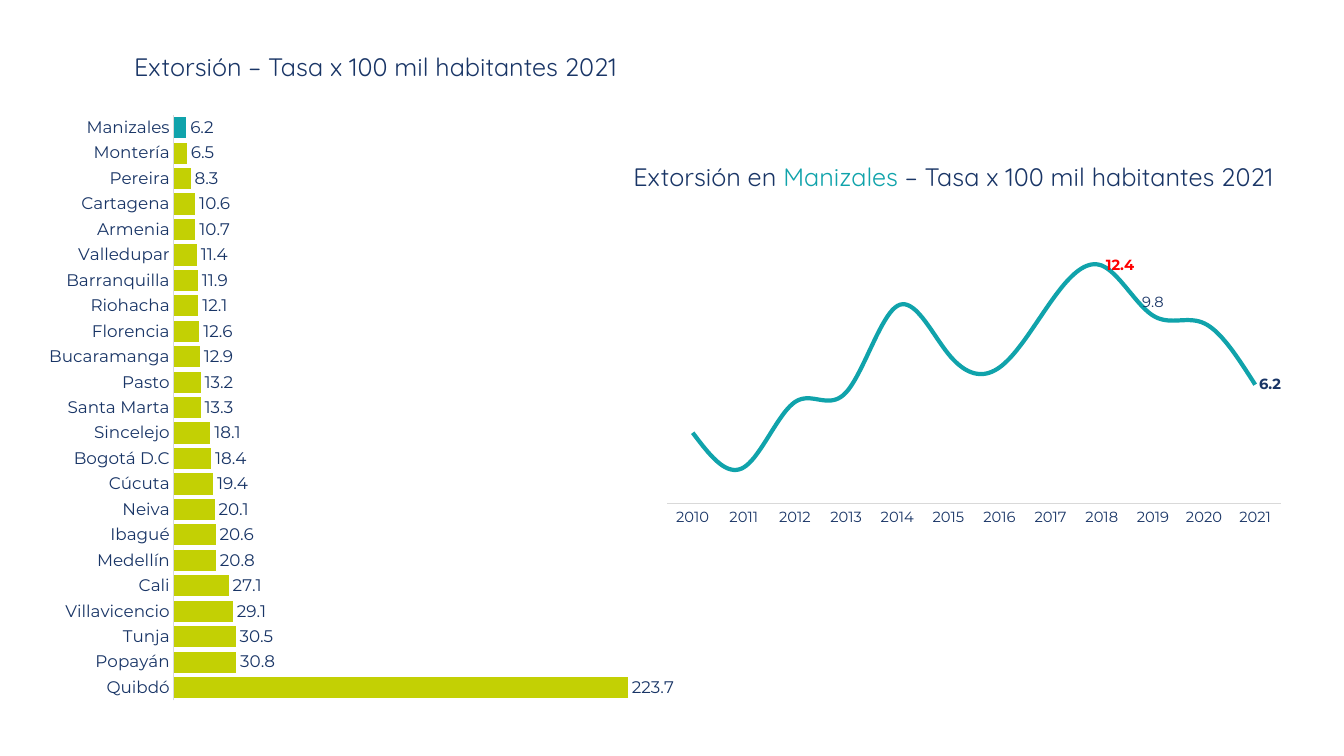
"""Build a slide on extortion rates: a bar chart by city and a line chart by year."""
import pptx
import pptx.chart.data
import pptx.dml.color
import pptx.enum.chart
import pptx.enum.text
import pptx.oxml
import pptx.oxml.ns
import pptx.util

Inches = pptx.util.Inches
Pt = pptx.util.Pt
RGBColor = pptx.dml.color.RGBColor
Kind = pptx.enum.chart.XL_CHART_TYPE
Place = pptx.enum.chart.XL_LABEL_POSITION
Tick = pptx.enum.chart.XL_TICK_MARK

NAVY = RGBColor(0x19, 0x35, 0x66)
TEAL = RGBColor(0x10, 0xA3, 0xAB)
LIME = RGBColor(0xC3, 0xD0, 0x04)
GRAY = RGBColor(0xD9, 0xD9, 0xD9)
RED = RGBColor(0xFF, 0x00, 0x00)

CITIES = {
    "Quibdó": 223.7, "Popayán": 30.8, "Tunja": 30.5, "Villavicencio": 29.1,
    "Cali": 27.1, "Medellín": 20.8, "Ibagué": 20.6, "Neiva": 20.1,
    "Cúcuta": 19.4, "Bogotá D.C": 18.4, "Sincelejo": 18.1,
    "Santa Marta": 13.3, "Pasto": 13.2, "Bucaramanga": 12.9,
    "Florencia": 12.6, "Riohacha": 12.1, "Barranquilla": 11.9,
    "Valledupar": 11.4, "Armenia": 10.7, "Cartagena": 10.6,
    "Pereira": 8.3, "Montería": 6.5, "Manizales": 6.2,
}
RATES = [3.7, 1.9, 5.3, 5.8, 10.3, 7.8, 7.1, 10.5, 12.4, 9.8, 9.4, 6.2]
YEARS = {str(2010 + step): rate for step, rate in enumerate(RATES)}


class Board:
    """Hold the style and the current slide."""

    head = "Quicksand"
    body = "Montserrat"

    def __init__(self, deck):
        self.slide = deck.slides.add_slide(deck.slide_layouts[5])

    def style(self, font, name, size, color, bold=False):
        font.name = name
        font.size = Pt(size)
        font.color.rgb = color
        font.bold = bold

    def letter(self, shape, box, runs):
        shape.left, shape.top, shape.width, shape.height = map(Inches, box)
        frame = shape.text_frame
        frame.word_wrap = True
        frame.auto_size = pptx.enum.text.MSO_AUTO_SIZE.SHAPE_TO_FIT_TEXT
        frame.vertical_anchor = pptx.enum.text.MSO_ANCHOR.TOP
        line = frame.paragraphs[0]
        line.alignment = pptx.enum.text.PP_ALIGN.CENTER
        for text, color in runs:
            run = line.add_run()
            run.text = text
            self.style(run.font, self.head, 18, color)

    def title(self, box, runs):
        self.letter(self.slide.shapes.title, box, runs)

    def label(self, box, runs):
        shape = self.slide.shapes.add_textbox(*map(Inches, box))
        self.letter(shape, box, runs)

    def chart(self, kind, box, rates, size, top, plot):
        data = pptx.chart.data.CategoryChartData(number_format="0.0")
        data.categories = list(rates)
        data.add_series("Tasa", list(rates.values()))
        frame = self.slide.shapes.add_chart(kind, *map(Inches, box), data)
        chart = frame.chart
        chart.has_title = False
        chart.has_legend = False
        self.style(chart.font, self.body, size, NAVY)
        axis = chart.category_axis
        axis.major_tick_mark = Tick.NONE
        axis.has_major_gridlines = False
        axis.format.line.color.rgb = GRAY
        axis.format.line.width = Pt(0.75)
        self.style(axis.tick_labels.font, self.body, size, NAVY)
        scale = chart.value_axis
        scale.visible = False
        scale.has_major_gridlines = False
        scale.minimum_scale = 0
        scale.maximum_scale = top
        self.fit(chart, plot)
        chart.plots[0].vary_by_categories = False
        return chart.plots[0]

    def fit(self, chart, plot):
        area = chart.element.find(".//" + pptx.oxml.ns.qn("c:plotArea"))
        for old in area.findall(pptx.oxml.ns.qn("c:layout")):
            area.remove(old)
        modes = '<c:xMode val="edge"/><c:yMode val="edge"/>'
        sizes = "".join(f'<c:{key} val="{part}"/>' for key, part in zip("xywh", plot))
        area.insert(0, pptx.oxml.parse_xml(
            f'<c:layout {pptx.oxml.ns.nsdecls("c")}><c:manualLayout>'
            f'<c:layoutTarget val="inner"/>{modes}{sizes}'
            '</c:manualLayout></c:layout>'))

    def bars(self, box, rates, accent):
        plot = self.chart(Kind.BAR_CLUSTERED, box, rates, 12, 250,
                          (0.21, 0.02, 0.77, 0.96))
        plot.gap_width = 20
        series = plot.series[0]
        series.format.fill.solid()
        series.format.fill.fore_color.rgb = LIME
        fill = series.points[list(rates).index(accent)].format.fill
        fill.solid()
        fill.fore_color.rgb = TEAL
        marks = series.data_labels
        marks.show_value = True
        marks.number_format = "#,##0.0"
        marks.number_format_is_linked = False
        marks.position = Place.OUTSIDE_END
        self.style(marks.font, self.body, 12, NAVY)

    def curve(self, box, rates, notes):
        plot = self.chart(Kind.LINE, box, rates, 10.5, 14,
                          (0.02, 0.02, 0.96, 0.89))
        series = plot.series[0]
        series.smooth = True
        series.format.line.color.rgb = TEAL
        series.format.line.width = Pt(3)
        series.marker.style = pptx.enum.chart.XL_MARKER_STYLE.NONE
        series.data_labels.show_value = False
        for year, (place, color, bold) in notes.items():
            mark = series.points[list(rates).index(year)].data_label
            self.style(mark.font, self.body, 10.5, color, bold)
            mark.position = place


def main():
    deck = pptx.Presentation()
    deck.slide_width = Inches(13.33)
    deck.slide_height = Inches(7.5)
    board = Board(deck)
    board.curve((6.49, 2.27, 6.34, 3), YEARS, {
        "2018": (Place.RIGHT, RED, True),
        "2019": (Place.ABOVE, NAVY, False),
        "2021": (Place.RIGHT, NAVY, True),
    })
    board.bars((0.35, 1.02, 6.54, 6.05), CITIES, "Manizales")
    board.title((0, 0.46, 7.45, 0.4), [
        ("Extorsión – Tasa x 100 mil habitantes 2021", NAVY)])
    board.label((5.4, 1.55, 8.11, 0.4), [
        ("Extorsión en ", NAVY), ("Manizales ", TEAL),
        ("– Tasa x 100 mil habitantes 2021", NAVY)])
    deck.save("out.pptx")


if __name__ == "__main__":
    main()
